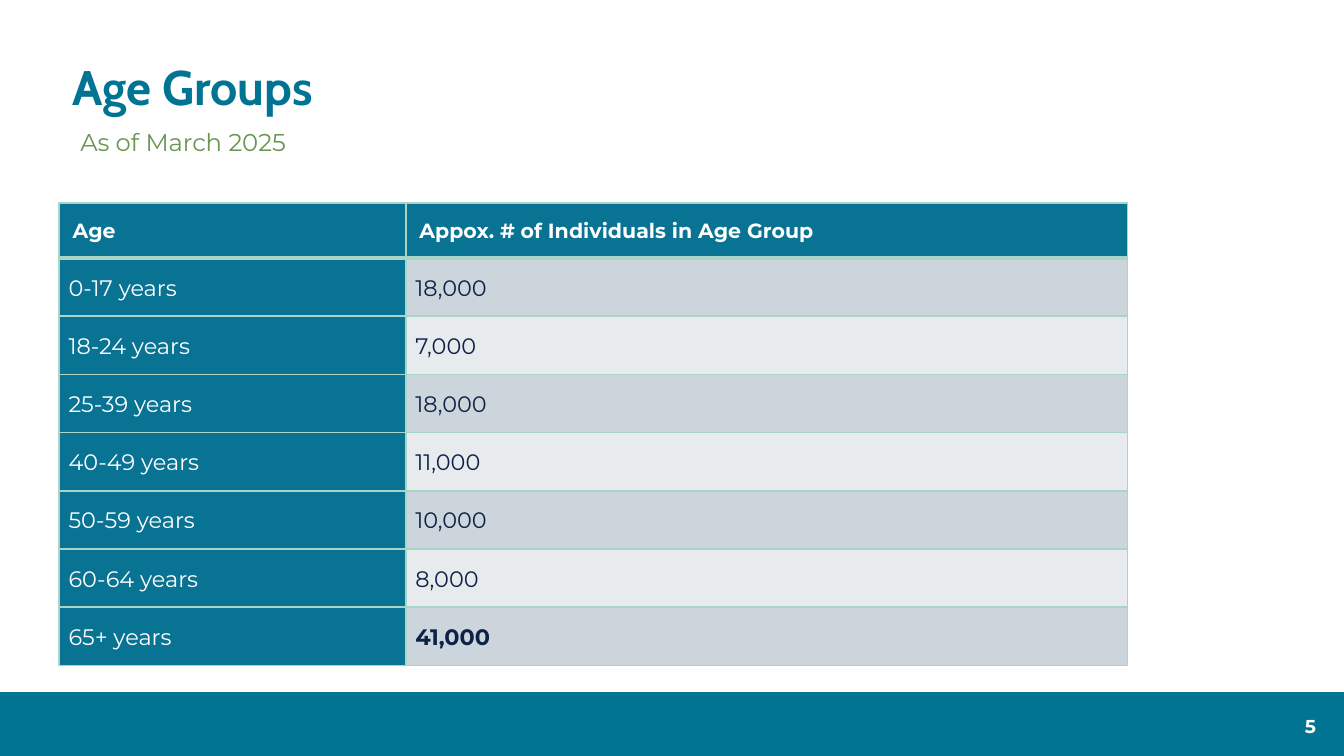
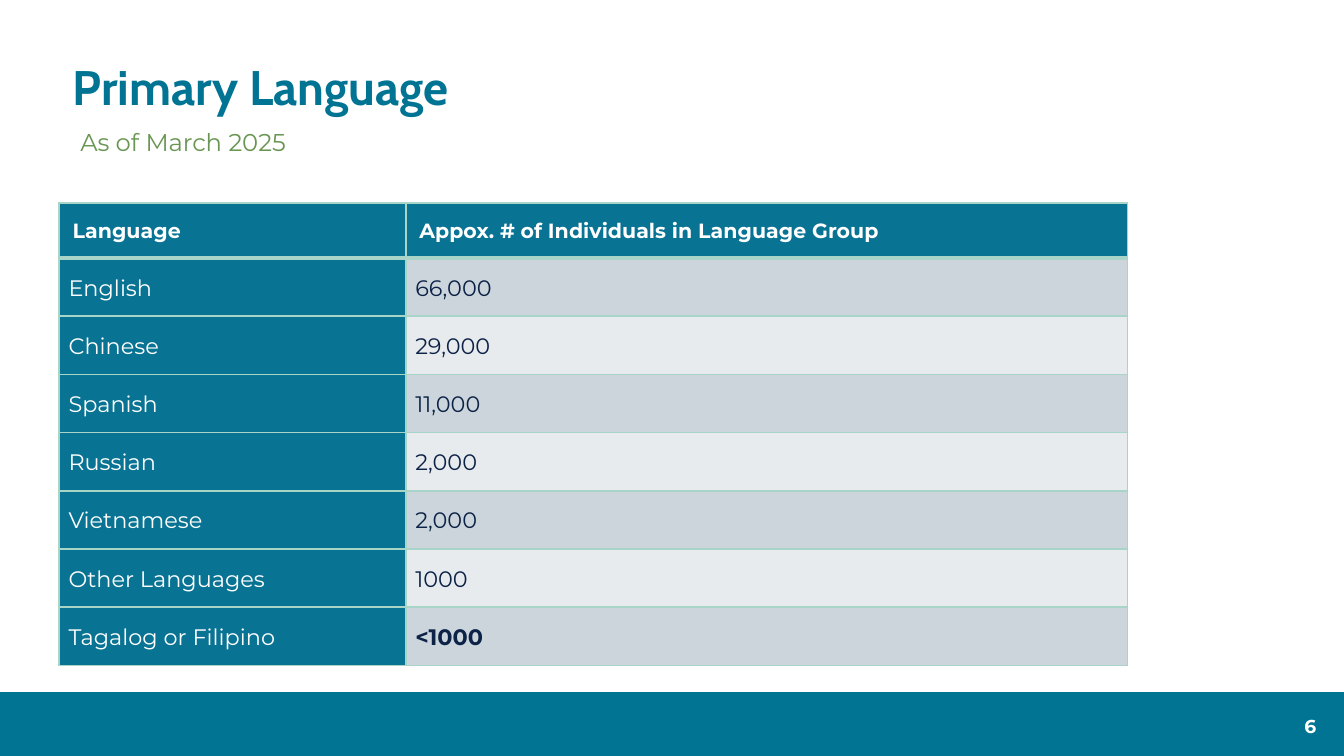
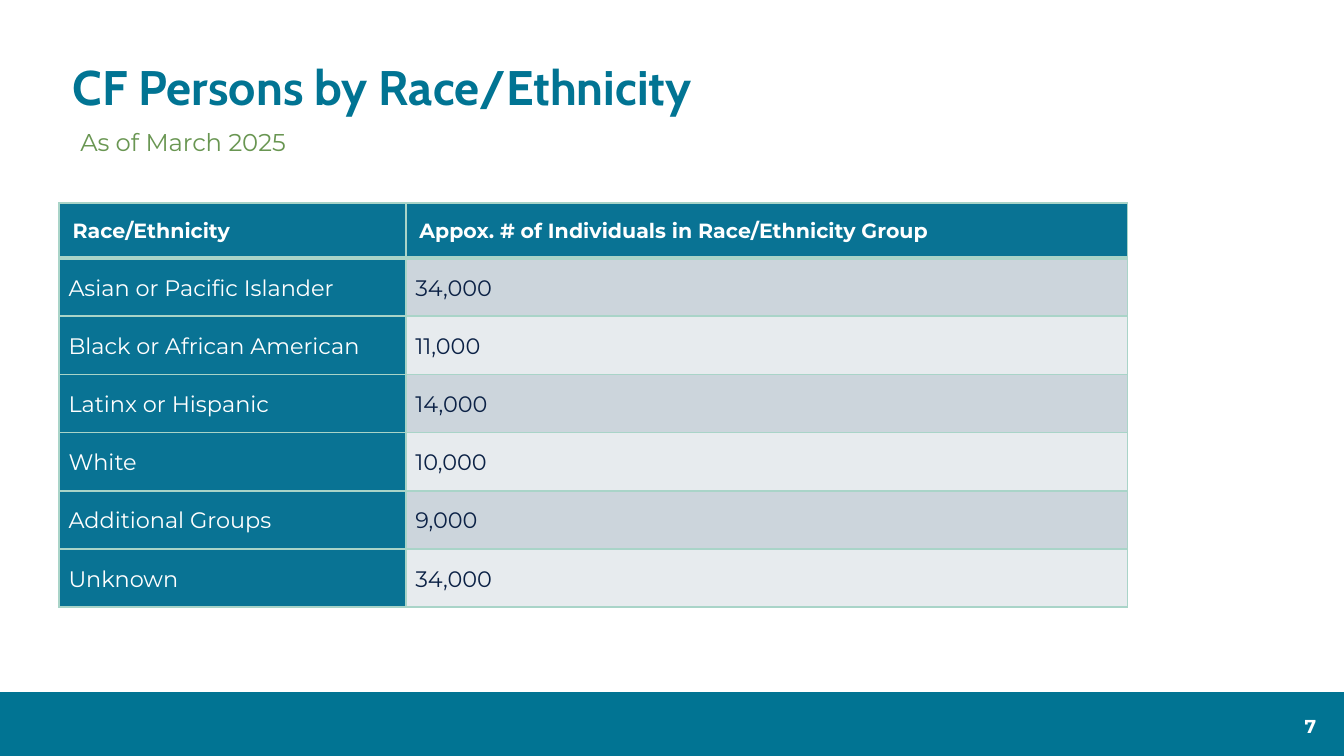
from lxml.etree import SubElement
from pptx import Presentation
from pptx.dml.color import RGBColor
from pptx.enum.shapes import MSO_SHAPE as Shape
from pptx.enum.text import MSO_ANCHOR as Anchor, PP_ALIGN as Align
from pptx.oxml import parse_xml
from pptx.oxml.ns import nsdecls, qn
from pptx.util import Inches, Pt

TEAL = RGBColor(0x01, 0x74, 0x93)
TABLE_TEAL = RGBColor(0x09, 0x73, 0x94)
GREEN = RGBColor(0x69, 0x96, 0x52)
MINT = RGBColor(0xA9, 0xD4, 0xC8)
NAVY = RGBColor(0x0C, 0x22, 0x46)
DARK_BAND = RGBColor(0xCC, 0xD5, 0xDC)
LIGHT_BAND = RGBColor(0xE7, 0xEB, 0xEE)
WHITE = RGBColor(0xFF, 0xFF, 0xFF)

HEADING_FONT = "Cabin"
BODY_FONT = "Montserrat"

SLIDE_WIDTH = 10
SLIDE_HEIGHT = SLIDE_WIDTH * 9 / 16
HEADING_BOX = (0.5, 0.45, 5.66, 0.81)
TABLE_BOX = (0.44, 1.51, 7.95)
FOOTER_BOX = (0, 5.15, SLIDE_WIDTH, 0.49)
LABEL_WIDTH = 2.58
HEADER_HEIGHT = 0.41
ROW_HEIGHT = 1.3 / 3

FIRST_PAGE = 5
PERIOD = "As of March 2025"
GROUPS = [
    ("Age Groups", "Age", [
        ("0-17 years", "18,000"),
        ("18-24 years", "7,000"),
        ("25-39 years", "18,000"),
        ("40-49 years", "11,000"),
        ("50-59 years", "10,000"),
        ("60-64 years", "8,000"),
        ("65+ years", "41,000"),
    ], True),
    ("Primary Language", "Language", [
        ("English", "66,000"),
        ("Chinese", "29,000"),
        ("Spanish", "11,000"),
        ("Russian", "2,000"),
        ("Vietnamese", "2,000"),
        ("Other Languages", "1000"),
        ("Tagalog or Filipino", "<1000"),
    ], True),
    ("CF Persons by Race/Ethnicity", "Race/Ethnicity", [
        ("Asian or Pacific Islander", "34,000"),
        ("Black or African American", "11,000"),
        ("Latinx or Hispanic", "14,000"),
        ("White", "10,000"),
        ("Additional Groups", "9,000"),
        ("Unknown", "34,000"),
    ], False),
]


def write(frame, text, *, size, color, font=BODY_FONT, bold=False, align=Align.LEFT, spacing=1.0):
    paragraph = frame.paragraphs[0]
    paragraph.alignment = align
    paragraph.line_spacing = spacing
    run = paragraph.add_run()
    run.text = text
    run.font.name = font
    run.font.size = Pt(size)
    run.font.bold = bold
    run.font.color.rgb = color


def add_text(slide, box, text, insets=(0.1, 0.05), **style):
    frame = slide.shapes.add_textbox(*map(Inches, box)).text_frame
    frame.word_wrap = True
    frame.vertical_anchor = Anchor.MIDDLE
    frame.margin_left = frame.margin_right = Inches(insets[0])
    frame.margin_top = frame.margin_bottom = Inches(insets[1])
    write(frame, text, **style)


def add_footer(slide, box, page):
    left, top, width, height = box
    band = slide.shapes.add_shape(Shape.RECTANGLE, *map(Inches, box))
    band.shadow.inherit = False
    band.fill.solid()
    band.fill.fore_color.rgb = TEAL
    band.line.fill.background()
    add_text(slide, (left + width - 0.5, top + 0.1, 0.5, 0.3), str(page),
             size=10, color=WHITE, bold=True, align=Align.CENTER)


def add_heading(slide, box, title):
    left, top, width, height = box
    title_height = 0.43
    add_text(slide, (left, top, width, title_height), title, insets=(0.04, 0.07),
             size=26, color=TEAL, font=HEADING_FONT, bold=True, spacing=0.9)
    add_text(slide, (left, top + title_height, width, height - title_height), PERIOD,
             size=13, color=GREEN, spacing=0.9)


def set_borders(cell, **widths):
    properties = cell._tc.get_or_add_tcPr()
    for position, side in enumerate("LRTB"):
        border = parse_xml(f'<a:ln{side} {nsdecls("a")} w="{Pt(widths.get(side, 1))}"/>')
        fill = SubElement(border, qn("a:solidFill"))
        SubElement(fill, qn("a:srgbClr"), val=str(MINT))
        properties.insert(position, border)


def fill_cell(cell, text, fill, borders, **style):
    cell.vertical_anchor = Anchor.MIDDLE
    cell.fill.solid()
    cell.fill.fore_color.rgb = fill
    set_borders(cell, **borders)
    write(cell.text_frame, text, spacing=1.07, **style)


def add_counts(slide, box, category, counts, bold_last):
    left, top, width = box
    height = HEADER_HEIGHT + ROW_HEIGHT * len(counts)
    table = slide.shapes.add_table(len(counts) + 1, 2, *map(Inches, (left, top, width, height))).table
    table.first_row = table.horz_banding = False
    table.columns[0].width = Inches(LABEL_WIDTH)
    table.columns[1].width = Inches(width - LABEL_WIDTH)
    table.rows[0].height = Inches(HEADER_HEIGHT)

    headers = (category, f"Appox. # of Individuals in {category} Group")
    for column, header in enumerate(headers):
        fill_cell(table.cell(0, column), header, TABLE_TEAL, {"B": 3},
                  size=11, color=WHITE, bold=True)

    for row, (label, count) in enumerate(counts, start=1):
        table.rows[row].height = Inches(ROW_HEIGHT)
        borders = {"T": 3} if row == 1 else {}
        band = DARK_BAND if row % 2 else LIGHT_BAND
        label_cell, count_cell = table.cell(row, 0), table.cell(row, 1)
        for cell in (label_cell, count_cell):
            cell.margin_left = cell.margin_right = Inches(0.07)
            cell.margin_top = cell.margin_bottom = 0
        fill_cell(label_cell, label, TABLE_TEAL, borders, size=12, color=WHITE)
        fill_cell(count_cell, count, band, borders, size=12, color=NAVY,
                  bold=bold_last and row == len(counts))


def main():
    deck = Presentation()
    deck.slide_width = Inches(SLIDE_WIDTH)
    deck.slide_height = Inches(SLIDE_HEIGHT)
    for page, (title, category, counts, bold_last) in enumerate(GROUPS, start=FIRST_PAGE):
        slide = deck.slides.add_slide(deck.slide_layouts[6])
        add_footer(slide, FOOTER_BOX, page)
        add_heading(slide, HEADING_BOX, title)
        add_counts(slide, TABLE_BOX, category, counts, bold_last)
    deck.save("out.pptx")


if __name__ == "__main__":
    main()
